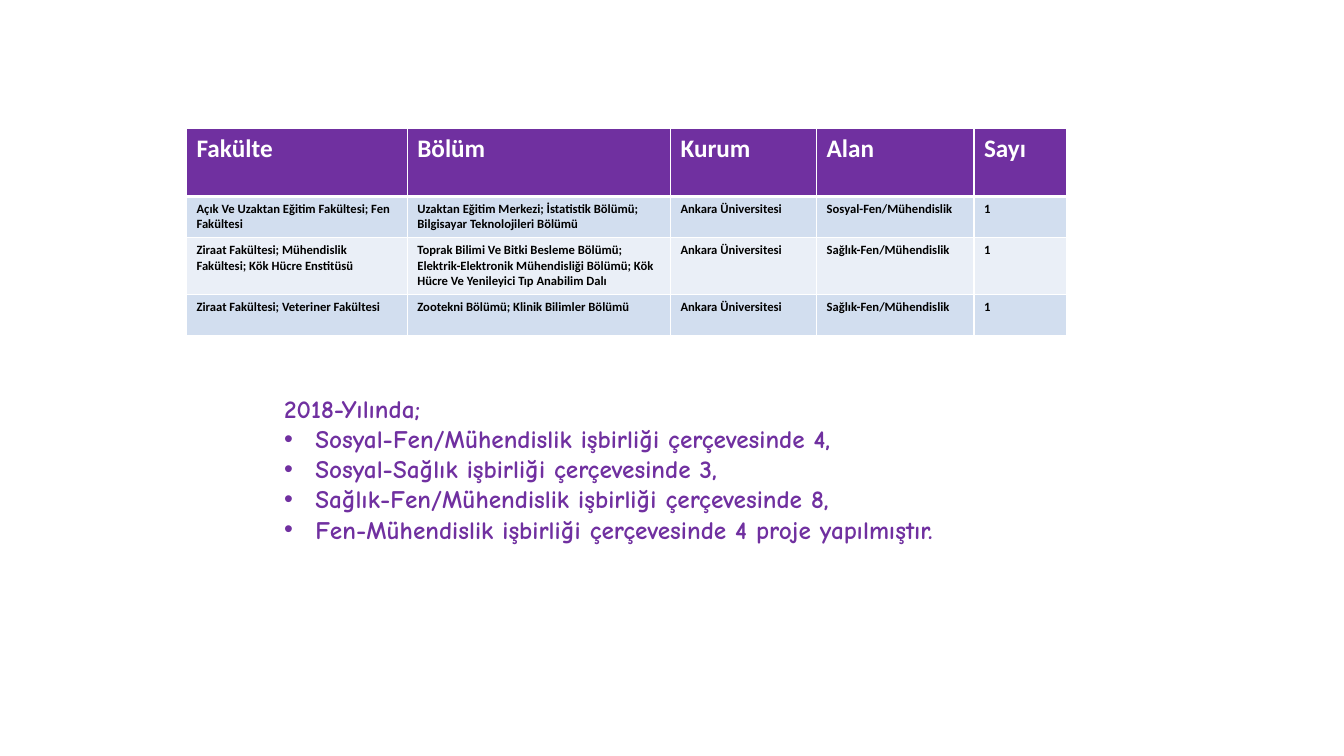
from dataclasses import dataclass

from lxml import etree
from pptx import Presentation
from pptx import util as u
from pptx.dml.color import RGBColor
from pptx.enum import text
from pptx.oxml import ns

PX = 9144


@dataclass(frozen=True)
class Theme:
    purple: str = "7030A0"
    white: str = "FFFFFF"
    black: str = "000000"
    bands: tuple = ("D2DEEF", "EAEFF7")
    table_font: str = "Calibri"
    note_font: str = "Comic Neue"
    large: int = 18
    small: int = 9


class SlideBuilder:
    """Draws styled elements on one slide, with lengths in px."""

    def __init__(self, prs, theme):
        self.theme = theme
        self.s = prs.slides.add_slide(prs.slide_layouts[6])

    def style(self, p, font, size, color):
        p.font.name = font
        p.font.size = u.Pt(size)
        p.font.bold = True
        p.font.color.rgb = RGBColor.from_string(color)

    def border(self, cell, side, width):
        tc_pr = cell._tc.get_or_add_tcPr()
        ln = etree.SubElement(tc_pr, ns.qn(f"a:ln{side}"), w=str(u.Pt(width)))
        fill = etree.SubElement(ln, ns.qn("a:solidFill"))
        etree.SubElement(fill, ns.qn("a:srgbClr"), val=self.theme.white)

    def cell(self, cell, content, row):
        t = self.theme
        header = row == 0
        cell.text = content
        for p in cell.text_frame.paragraphs:
            self.style(p, t.table_font, t.large if header else t.small,
                       t.white if header else t.black)
        widths = {"L": 1, "R": 1, "T": 3 if row == 1 else 1, "B": 3 if header else 1}
        for side, width in widths.items():
            self.border(cell, side, width)
        cell.fill.solid()
        color = t.purple if header else t.bands[(row - 1) % 2]
        cell.fill.fore_color.rgb = RGBColor.from_string(color)

    def table(self, x, y, widths, heights, rows):
        frame = self.s.shapes.add_table(len(rows), len(widths), x * PX, y * PX,
                                        sum(widths) * PX, sum(heights) * PX)
        table = frame.table
        for column, width in zip(table.columns, widths):
            column.width = width * PX
        for i, (height, row) in enumerate(zip(heights, rows)):
            table.rows[i].height = height * PX
            for j, content in enumerate(row):
                self.cell(table.cell(i, j), content, i)

    def bullet(self, p, indent):
        p_pr = p._p.get_or_add_pPr()
        p_pr.set("marL", str(indent * PX))
        p_pr.set("indent", str(-indent * PX))
        etree.SubElement(p_pr, ns.qn("a:buFont"), typeface="Arial")
        etree.SubElement(p_pr, ns.qn("a:buChar"), char="•")

    def bullet_list(self, x, y, w, h, heading, items, indent):
        t = self.theme
        tf = self.s.shapes.add_textbox(x * PX, y * PX, w * PX, h * PX).text_frame
        tf.word_wrap = True
        tf.auto_size = text.MSO_AUTO_SIZE.SHAPE_TO_FIT_TEXT
        tf.text = "\n".join([heading, *items])
        for i, p in enumerate(tf.paragraphs):
            if i:
                self.bullet(p, indent)
            self.style(p, t.note_font, t.large, t.purple)


def main():
    prs = Presentation()
    prs.slide_width, prs.slide_height = 1333 * PX, 750 * PX
    slide = SlideBuilder(prs, Theme())
    university = "Ankara Üniversitesi"
    social, health = "Sosyal-Fen/Mühendislik", "Sağlık-Fen/Mühendislik"
    slide.table(185, 127, [219, 261, 145, 156, 92], [68, 41, 56, 41], [
        ["Fakülte", "Bölüm", "Kurum", "Alan", "Sayı"],
        ["Açık Ve Uzaktan Eğitim Fakültesi; Fen Fakültesi",
         "Uzaktan Eğitim Merkezi; İstatistik Bölümü; Bilgisayar Teknolojileri Bölümü",
         university, social, "1"],
        ["Ziraat Fakültesi; Mühendislik Fakültesi; Kök Hücre Enstitüsü",
         "Toprak Bilimi Ve Bitki Besleme Bölümü; Elektrik-Elektronik Mühendisliği "
         "Bölümü; Kök Hücre Ve Yenileyici Tıp Anabilim Dalı",
         university, health, "1"],
        ["Ziraat Fakültesi; Veteriner Fakültesi",
         "Zootekni Bölümü; Klinik Bilimler Bölümü",
         university, health, "1"],
    ])
    slide.bullet_list(272, 385, 760, 162, "2018-Yılında;", [
        "Sosyal-Fen/Mühendislik işbirliği çerçevesinde 4,",
        "Sosyal-Sağlık işbirliği çerçevesinde 3,",
        "Sağlık-Fen/Mühendislik işbirliği çerçevesinde 8,",
        "Fen-Mühendislik işbirliği çerçevesinde 4 proje yapılmıştır.",
    ], indent=31)
    prs.save("out.pptx")


if __name__ == "__main__":
    main()
